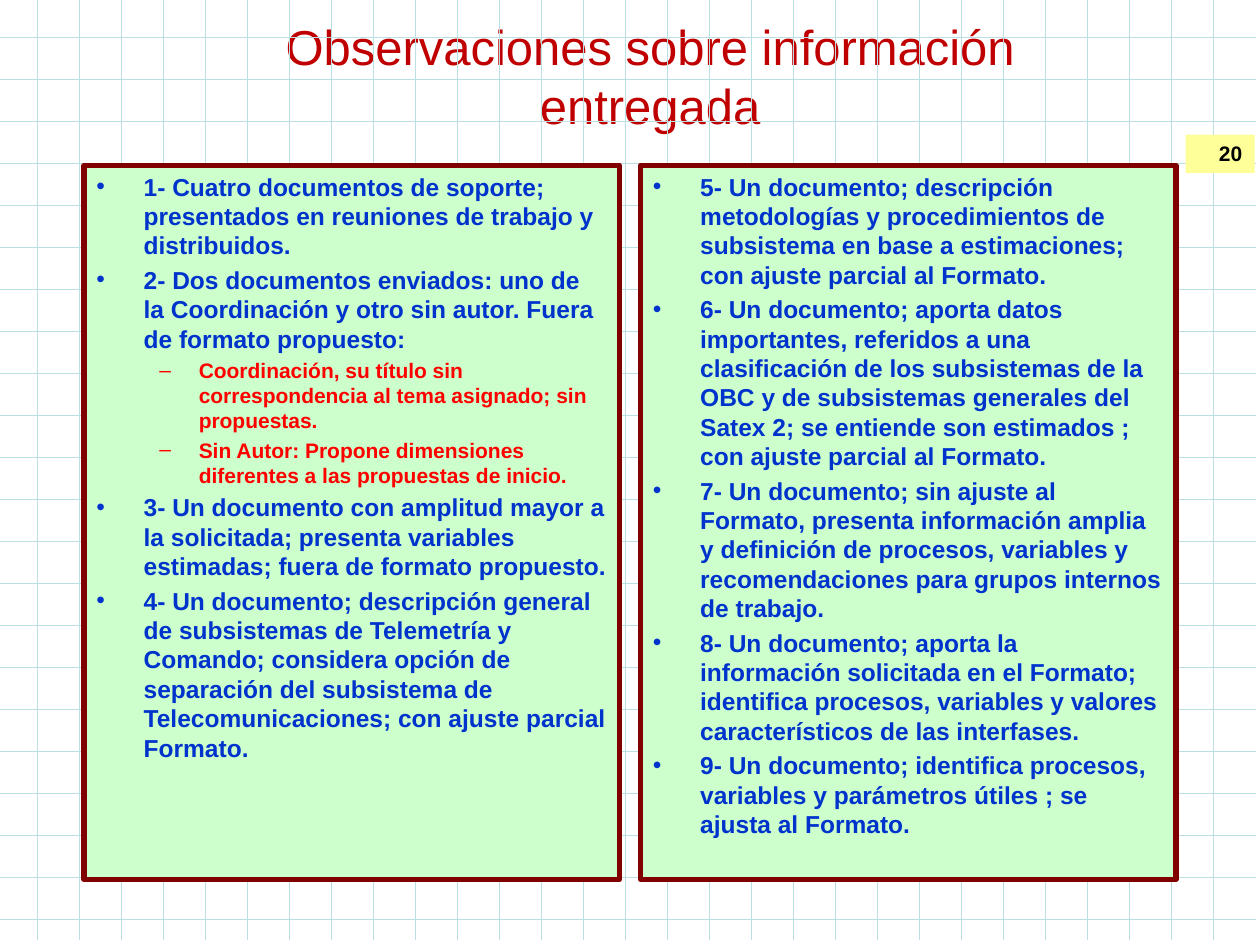
from lxml import etree
from pptx import Presentation
from pptx.dml.color import RGBColor
from pptx.enum.dml import MSO_LINE
from pptx.enum.shapes import MSO_CONNECTOR, MSO_SHAPE
from pptx.enum.text import MSO_ANCHOR, MSO_AUTO_SIZE, PP_ALIGN
from pptx.oxml.ns import qn
from pptx.util import Pt

STRAIGHT = MSO_CONNECTOR.STRAIGHT
RECT = MSO_SHAPE.RECTANGLE
DOTS = MSO_LINE.ROUND_DOT
TOP, MIDDLE = MSO_ANCHOR.TOP, MSO_ANCHOR.MIDDLE
LEFT, CENTER, RIGHT = PP_ALIGN.LEFT, PP_ALIGN.CENTER, PP_ALIGN.RIGHT
NO_FIT = MSO_AUTO_SIZE.NONE

RED = RGBColor(0xC0, 0x00, 0x00)
BRIGHT = RGBColor(0xFF, 0x00, 0x00)
BLUE = RGBColor(0x00, 0x33, 0xCC)
BLACK = RGBColor(0x00, 0x00, 0x00)
MINT = RGBColor(0xCC, 0xFF, 0xCC)
MAROON = RGBColor(0x80, 0x00, 0x00)
YELLOW = RGBColor(0xFF, 0xFF, 0x99)
AQUA = RGBColor(0xBB, 0xE0, 0xE3)

# Per level: bullet, left margin, hanging indent, size, colour
LEVELS = [("•", 27, 27, 14, BLUE), ("–", 58.5, 22.5, 12, BRIGHT)]

# Column items as (level, text)
FIRST = [
    (0, "1- Cuatro documentos de soporte; presentados en reuniones de "
        "trabajo y distribuidos."),
    (0, "2- Dos documentos enviados: uno de la Coordinación y otro sin "
        "autor. Fuera de formato propuesto:"),
    (1, "Coordinación, su título sin correspondencia al tema asignado; "
        "sin propuestas."),
    (1, "Sin Autor: Propone dimensiones diferentes a las propuestas de "
        "inicio."),
    (0, "3- Un documento con amplitud mayor a la solicitada; presenta "
        "variables estimadas; fuera de formato propuesto."),
    (0, "4- Un documento; descripción general de subsistemas de Telemetría "
        "y Comando; considera opción de separación del subsistema de "
        "Telecomunicaciones; con ajuste parcial Formato."),
]
SECOND = [
    (0, "5- Un documento; descripción metodologías y procedimientos de "
        "subsistema en base a estimaciones; con ajuste parcial al Formato."),
    (0, "6- Un documento; aporta datos importantes, referidos a una "
        "clasificación de los subsistemas de la OBC y de subsistemas "
        "generales del Satex 2; se entiende son estimados ; con ajuste "
        "parcial al Formato."),
    (0, "7- Un documento; sin ajuste al Formato, presenta información "
        "amplia y definición de procesos, variables y recomendaciones para "
        "grupos internos de trabajo."),
    (0, "8- Un documento; aporta la información solicitada en el Formato; "
        "identifica procesos, variables y valores característicos de las "
        "interfases."),
    (0, "9- Un documento; identifica procesos, variables y parámetros "
        "útiles ; se ajusta al Formato."),
]


def assign(item, values):
    for name, value in values.items():
        setattr(item, name, value)


def write(para, text, size, color, bold, align):
    para.alignment = align
    run = para.add_run()
    run.text = text
    assign(run.font, {"name": "Arial", "size": Pt(size), "bold": bold})
    run.font.color.rgb = color


def panel(slide, box, fill):
    shape = slide.shapes.add_shape(RECT, *map(Pt, box))
    shape.shadow.inherit = False
    shape.fill.solid()
    shape.fill.fore_color.rgb = fill
    assign(shape.text_frame, {"word_wrap": True, "vertical_anchor": TOP})
    return shape


def grid(slide, box, start, step):
    left, top, width, height = box
    right, bottom = left + width, top + height
    rows = range(int((bottom - start) // step) + 1)
    cols = range(int((right - start) // step) + 1)
    ends = [(left, start + step * i, right, start + step * i) for i in rows]
    ends += [(start + step * i, top, start + step * i, bottom) for i in cols]
    for points in ends:
        rule = slide.shapes.add_connector(STRAIGHT, *map(Pt, points))
        assign(rule.line, {"width": Pt(0.25), "dash_style": DOTS})
        rule.line.color.rgb = AQUA
        etree.SubElement(rule._element.spPr, qn("a:effectLst"))


def heading(slide, box, text):
    title = slide.shapes.title
    assign(title, dict(zip(("left", "top", "width", "height"), map(Pt, box))))
    frame = title.text_frame
    assign(frame, {"word_wrap": True, "auto_size": NO_FIT,
                   "vertical_anchor": MIDDLE})
    write(frame.paragraphs[0], text, 28, RED, False, CENTER)


def column(slide, box, items):
    shape = panel(slide, box, MINT)
    shape.line.width = Pt(3)
    shape.line.color.rgb = MAROON
    frame = shape.text_frame
    for i, (level, text) in enumerate(items):
        mark, margin, hang, size, color = LEVELS[level]
        para = frame.add_paragraph() if i else frame.paragraphs[0]
        para.level = level
        # Hanging bullet
        props = para._p.get_or_add_pPr()
        props.set("marL", str(Pt(margin)))
        props.set("indent", str(-Pt(hang)))
        etree.SubElement(props, qn("a:buFont")).set("typeface", "Arial")
        etree.SubElement(props, qn("a:buChar")).set("char", mark)
        if i:
            para.space_before = Pt(size * 0.2)
        write(para, text, size, color, True, LEFT)


def number(slide, box, text):
    shape = panel(slide, box, YELLOW)
    shape.line.fill.background()
    write(shape.text_frame.paragraphs[0], text, 12, BLACK, True, RIGHT)


def main():
    deck = Presentation()
    deck.slide_width, deck.slide_height = Pt(720), Pt(540)
    slide = deck.slides.add_slide(deck.slide_layouts[5])
    grid(slide, (-3, -3, 720, 540), 21.5, 24)
    heading(slide, (105, 9.5, 533, 67),
            "Observaciones sobre información entregada")
    # Two equal columns with a gap
    width, gap = 306, 12
    for i, items in enumerate((FIRST, SECOND)):
        column(slide, (48 + i * (width + gap), 94.5, width, 408), items)
    number(slide, (677.5, 77, 39.5, 22), "20")
    deck.save("out.pptx")


if __name__ == "__main__":
    main()
